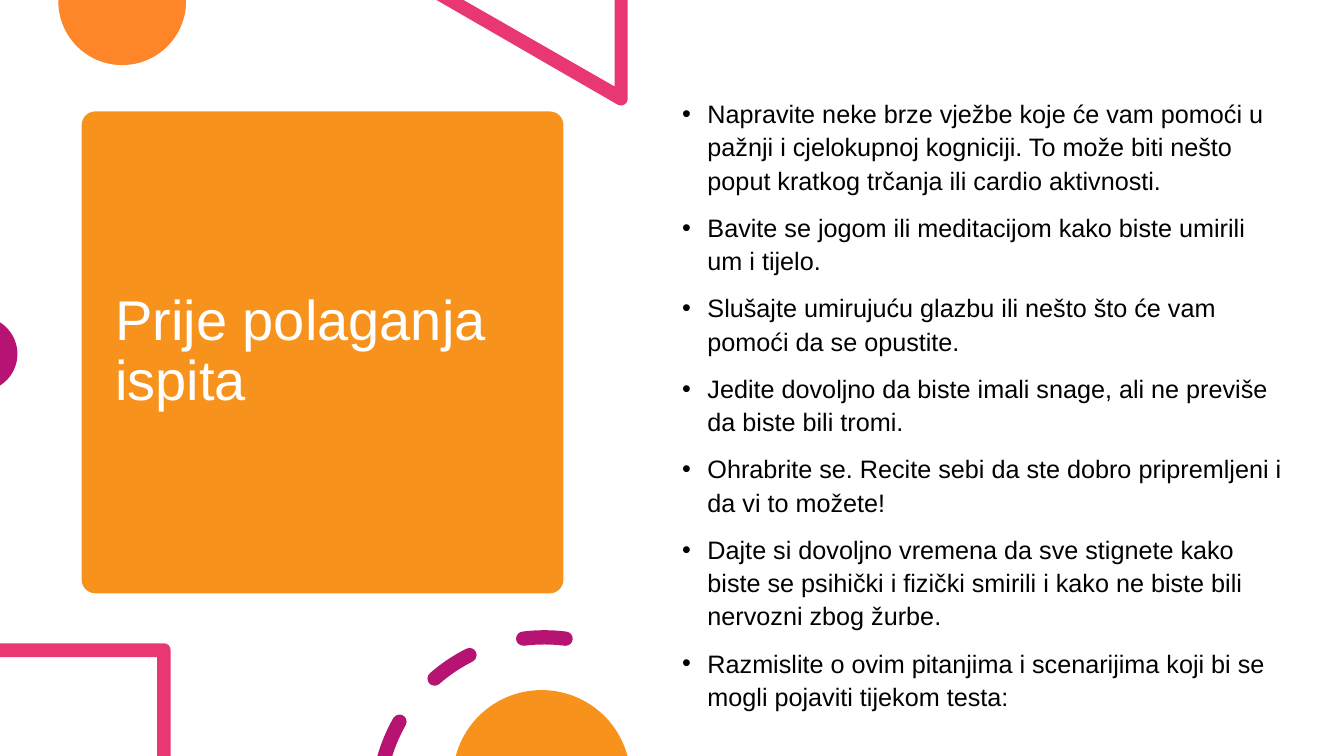
import math
import lxml.etree
import pptx
import pptx.util
import pptx.dml.color
import pptx.enum.shapes
import pptx.enum.text
import pptx.oxml
import pptx.oxml.ns

Cm = pptx.util.Cm
Pt = pptx.util.Pt
qn = pptx.oxml.ns.qn
COLORS = {
    "amber": "F7921D",
    "orange": "FF8529",
    "pink": "E83773",
    "purple": "B71373",
    "white": "FFFFFF",
    "black": "000000",
}
RGB = {name: pptx.dml.color.RGBColor.from_string(code) for name, code in COLORS.items()}

deck = pptx.Presentation()
deck.slide_width, deck.slide_height = Cm(33.87), Cm(19.05)
slide = deck.slides.add_slide(deck.slide_layouts[6])


def arc(x, y, radius, start, end):
    quadrants = [a for a in range(-360, 721, 90) if min(start, end) < a < max(start, end)]
    stops = [start] + sorted(quadrants, reverse=end < start) + [end]
    nodes = [(math.cos(math.radians(a)), math.sin(math.radians(a))) for a in stops]
    pieces = [(x + radius * nodes[0][0], y + radius * nodes[0][1])]
    for i in range(len(stops) - 1):
        (c1, s1), (c2, s2) = nodes[i], nodes[i + 1]
        k = 4 / 3 * math.tan(math.radians(stops[i + 1] - stops[i]) / 4)
        pieces.append((x + radius * (c1 - k * s1), y + radius * (s1 + k * c1),
                       x + radius * (c2 + k * s2), y + radius * (s2 - k * c2),
                       x + radius * c2, y + radius * s2))
    return pieces


def outline(color, *contours):
    builder = None
    segments = []
    for contour in contours:
        pieces = [contour[0]]
        for piece in contour[1:]:
            if math.dist(piece[-2:], pieces[-1][-2:]) > 0.03:
                pieces.append(piece)
        ends = [(Cm(piece[-2]), Cm(piece[-1])) for piece in pieces]
        if builder is None:
            builder = slide.shapes.build_freeform(*ends[0])
        else:
            builder.move_to(*ends[0])
        builder.add_line_segments(ends[1:], close=False)
        builder.add_line_segments([], close=True)
        segments += pieces[1:]
    figure = builder.convert_to_shape()
    figure.shadow.inherit = False
    figure.fill.solid()
    figure.fill.fore_color.rgb = RGB[color]
    figure.line.fill.background()
    for straight, piece in zip(list(figure._element.iter(qn("a:lnTo"))), segments):
        if len(piece) == 6:
            curve = lxml.etree.Element(qn("a:cubicBezTo"))
            for px, py in zip(piece[::2], piece[1::2]):
                lxml.etree.SubElement(curve, qn("a:pt"), x=str(Cm(px) - figure.left),
                                      y=str(Cm(py) - figure.top))
            straight.getparent().replace(straight, curve)


title_card = slide.shapes.add_shape(
    pptx.enum.shapes.MSO_SHAPE.ROUNDED_RECTANGLE, Cm(2.06), Cm(2.81), Cm(12.14), Cm(12.14))
title_card.adjustments[0] = 0.028
title_card.shadow.inherit = False
title_card.fill.solid()
title_card.fill.fore_color.rgb = RGB["amber"]
title_card.line.fill.background()

title = slide.shapes.add_textbox(Cm(2.66), Cm(3.09), Cm(10.95), Cm(11.58)).text_frame
title.word_wrap = True
title.vertical_anchor = pptx.enum.text.MSO_ANCHOR.MIDDLE
heading = title.paragraphs[0]
heading.line_spacing = 0.9
heading_run = heading.add_run()
heading_run.text = "Prije polaganja ispita"
heading_run.font.name = "Arial"
heading_run.font.size = Pt(40)
heading_run.font.color.rgb = RGB["white"]

outline("orange", [(4.68, 0), (1.47, 0)] + arc(3.08, 0.03, 1.61, 180, 0))
outline("pink", [(15.82, 0), (15.49, 0), (15.49, 2.18), (11.68, 0), (11, 0)]
        + arc(15.65, 2.49, 0.17, 120, 0))
outline("purple", arc(-0.5, 8.92, 0.94, -57.5, 57.5))

tips = [
    "Napravite neke brze vježbe koje će vam pomoći u pažnji i cjelokupnoj kogniciji. "
    "To može biti nešto poput kratkog trčanja ili cardio aktivnosti.",
    "Bavite se jogom ili meditacijom kako biste umirili um i tijelo.",
    "Slušajte umirujuću glazbu ili nešto što će vam pomoći da se opustite.",
    "Jedite dovoljno da biste imali snage, ali ne previše da biste bili tromi.",
    "Ohrabrite se. Recite sebi da ste dobro pripremljeni i da vi to možete!",
    "Dajte si dovoljno vremena da sve stignete kako biste se psihički i fizički smirili "
    "i kako ne biste bili nervozni zbog žurbe.",
    "Razmislite o ovim pitanjima i scenarijima koji bi se mogli pojaviti tijekom testa:",
]
advice = slide.shapes.add_textbox(Cm(16.94), Cm(2.28), Cm(15.65), Cm(15.98)).text_frame
advice.word_wrap = True
for index, tip in enumerate(tips):
    item = advice.paragraphs[0] if index == 0 else advice.add_paragraph()
    item.line_spacing = 1.1
    item.space_before = Pt(10 if index else 0)
    properties = item._p.get_or_add_pPr()
    properties.set("marL", str(Cm(0.64)))
    properties.set("indent", str(Cm(-0.64)))
    lxml.etree.SubElement(properties, qn("a:buFont"), typeface="Arial")
    lxml.etree.SubElement(properties, qn("a:buChar"), char="•")
    tip_run = item.add_run()
    tip_run.text = tip
    tip_run.font.name = "Arial"
    tip_run.font.size = Pt(18)
    tip_run.font.color.rgb = RGB["black"]

outline("pink", [(0, 16.21), (0, 16.56), (3.96, 16.56), (3.96, 19.05), (4.3, 19.05)]
        + arc(4.13, 16.38, 0.17, 360, 270))

ring_x, ring_y, ring_radius, half_width = 13.72, 20.26, 4.2, 0.18
dashes = []
for start, end in [(197, 209.6), (228.8, 243.3), (262.7, 277.3)]:
    clipped = start == 197
    middle = arc(ring_x, ring_y, ring_radius, start, end)
    dash = (arc(ring_x, ring_y, ring_radius + half_width, 196 if clipped else start, end)
            + arc(*middle[-1][-2:], half_width, end, end + 180)
            + arc(ring_x, ring_y, ring_radius - half_width, end, 197.5 if clipped else start))
    if not clipped:
        dash += arc(*middle[0], half_width, start + 180, start + 360)
    dashes.append(dash)
outline("purple", *dashes)
outline("amber", arc(13.65, 19.63, 2.24, 195, 345))

deck.save("out.pptx")
